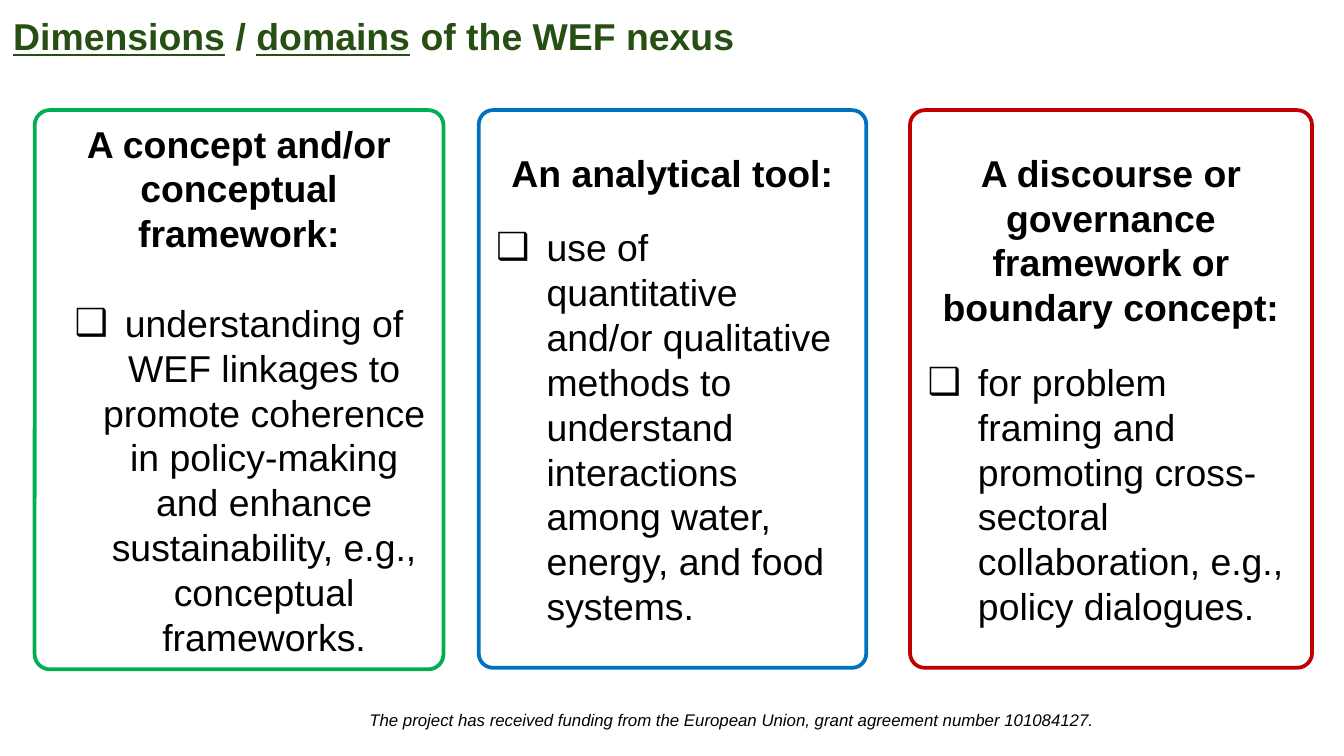
from dataclasses import dataclass

from lxml.etree import SubElement
from pptx import Presentation
from pptx.dml.color import RGBColor as RGB
from pptx.enum.shapes import MSO_SHAPE as Shape
from pptx.enum.text import MSO_ANCHOR as Anchor, MSO_AUTO_SIZE as AutoSize, PP_ALIGN as Align
from pptx.oxml.ns import qn
from pptx.util import Pt


@dataclass(frozen=True)
class Theme:
    font: str = "Arial"
    title: RGB = RGB(0x27, 0x4E, 0x13)
    text: RGB = RGB(0, 0, 0)
    green: RGB = RGB(0x00, 0xB0, 0x50)
    blue: RGB = RGB(0x00, 0x70, 0xC0)
    red: RGB = RGB(0xC0, 0x00, 0x00)
    body_size: int = 20
    note_size: int = 9
    line_pitch: int = 24


THEME = Theme()
CARD_TOP = 59
INDENT = 27


def format_run(r, size, color, bold=False, italic=False, underline=False):
    font = r.font
    font.name, font.size = THEME.font, Pt(size)
    font.bold, font.italic, font.underline = bold, italic, underline
    font.color.rgb = color


def add_text_box(slide, left, top, width, height):
    tf = slide.shapes.add_textbox(Pt(left), Pt(top), Pt(width), Pt(height)).text_frame
    tf.word_wrap = True
    tf.margin_left = tf.margin_right = tf.margin_top = tf.margin_bottom = Pt(7.2)
    return tf


def add_title(slide, parts):
    p = add_text_box(slide, 0, 0, 404.6, 36).paragraphs[0]
    for text, underlined in parts:
        r = p.add_run()
        r.text = text
        format_run(r, THEME.body_size, THEME.title, bold=True, underline=underlined)


def add_funding_note(slide, text):
    tf = add_text_box(slide, 190.8, 373.7, 441.4, 25.2)
    tf.auto_size = AutoSize.SHAPE_TO_FIT_TEXT
    p = tf.paragraphs[0]
    p.text = text
    p.line_spacing, p.space_after = 1.08, Pt(8)
    format_run(p.runs[0], THEME.note_size, THEME.text, italic=True)


def set_bullet(p, char):
    pPr = p._p.get_or_add_pPr()
    pPr.set("marL", str(Pt(INDENT)))
    pPr.set("indent", str(-Pt(INDENT)))
    color = SubElement(pPr, qn("a:buClr"))
    SubElement(color, qn("a:srgbClr"), val=str(THEME.text))
    SubElement(pPr, qn("a:buFont"), typeface=THEME.font)
    SubElement(pPr, qn("a:buChar"), char=char)


def add_card(slide, left, width, height, color, heading, body, align, gap):
    sp = slide.shapes.add_shape(Shape.ROUNDED_RECTANGLE, Pt(left), Pt(CARD_TOP),
                                Pt(width), Pt(height))
    sp.adjustments[0] = 0.037
    sp.shadow.inherit = False
    sp.fill.background()
    sp.line.color.rgb = color
    sp.line.width = Pt(2)

    tf = sp.text_frame
    tf.word_wrap = True
    tf.vertical_anchor = Anchor.MIDDLE
    head, item = tf.paragraphs[0], tf.add_paragraph()
    set_bullet(item, "❑")
    for p, text, alignment in ((head, heading, Align.CENTER), (item, body, align)):
        p.text = text
        p.alignment = alignment
        p.line_spacing = Pt(THEME.line_pitch)
        format_run(p.runs[0], THEME.body_size, THEME.text, bold=p is head)
    head.space_after = Pt(gap)


def main():
    prs = Presentation()
    prs.slide_width, prs.slide_height = Pt(720), Pt(405)
    slide = prs.slides.add_slide(prs.slide_layouts[6])

    # Footer and title
    add_funding_note(slide, "The project has received funding from the European Union, "
                            "grant agreement number 101084127.")
    add_title(slide, [("Dimensions", True), (" / ", False), ("domains", True),
                      (" of the WEF nexus", False)])

    # One card per dimension of the nexus
    cards = [
        (18.6, 219, 299.6, THEME.green, "A concept and/or conceptual framework:",
         "understanding of WEF linkages to promote coherence in policy-making and enhance "
         "sustainability, e.g., conceptual frameworks.", Align.CENTER, THEME.line_pitch),
        (256.5, 207.6, 298.8, THEME.blue, "An analytical tool:",
         "use of quantitative and/or qualitative methods to understand interactions among "
         "water, energy, and food systems.", Align.LEFT, 16),
        (487.5, 215.4, 298.8, THEME.red,
         "A discourse or governance framework or boundary concept:",
         "for problem framing and promoting cross-sectoral collaboration, e.g., "
         "policy dialogues.", Align.LEFT, 16),
    ]
    for card in cards:
        add_card(slide, *card)

    prs.save("out.pptx")


if __name__ == "__main__":
    main()
